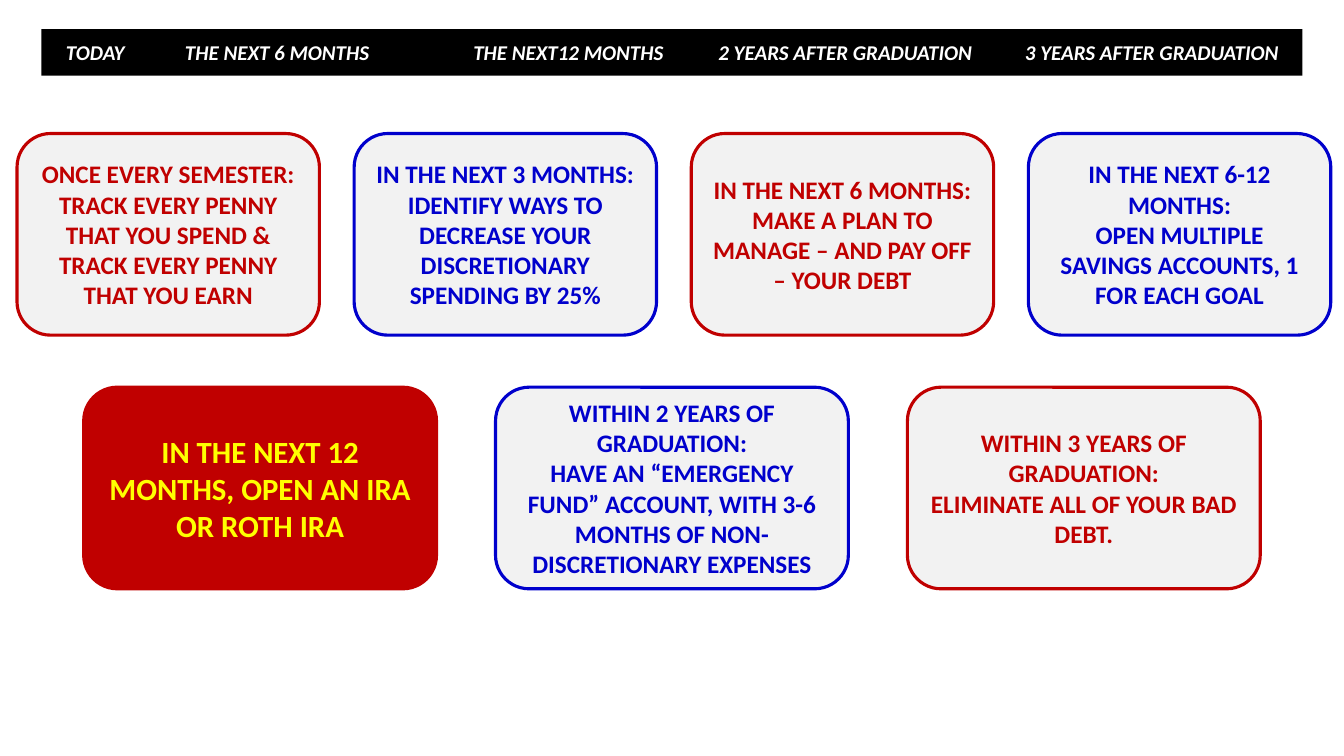
from lxml.etree import SubElement
from pptx import Presentation
from pptx.dml.color import RGBColor
from pptx.enum.shapes import MSO_SHAPE
from pptx.enum.text import MSO_ANCHOR, PP_ALIGN
from pptx.oxml.ns import qn
from pptx.util import Pt

COLORS = {"black": "000000", "white": "FFFFFF", "gray": "F2F2F2",
          "red": "C00000", "blue": "0000CC", "yellow": "FFFF00"}

# Milestone and its distance from the start of the timeline text
TIMELINE = [("TODAY", 0), ("THE NEXT 6 MONTHS", 85), ("THE NEXT12 MONTHS", 291),
            ("2 YEARS AFTER GRADUATION", 466), ("3 YEARS AFTER GRADUATION", 685)]

# Paragraphs, fill, line, text colour, text size
GOAL_ROWS = [
    {"left": 12.2, "top": 95.4, "width": 216, "pitch": 240.8, "goals": [
        (["ONCE EVERY SEMESTER:",
          "TRACK EVERY PENNY THAT YOU SPEND & TRACK EVERY PENNY THAT YOU EARN"],
         "gray", "red", "red", 18),
        (["IN THE NEXT 3 MONTHS:",
          "IDENTIFY WAYS TO DECREASE YOUR DISCRETIONARY SPENDING BY 25%"],
         "gray", "blue", "blue", 18),
        (["IN THE NEXT 6 MONTHS:", "MAKE A PLAN TO MANAGE – AND PAY OFF – YOUR DEBT"],
         "gray", "red", "red", 18),
        (["IN THE NEXT 6-12 MONTHS:", "OPEN MULTIPLE SAVINGS ACCOUNTS, 1 FOR EACH GOAL"],
         "gray", "blue", "blue", 18),
    ]},
    {"left": 59.8, "top": 276.6, "width": 252, "pitch": 294.2, "goals": [
        (["IN THE NEXT 12 MONTHS, OPEN AN IRA OR ROTH IRA"],
         "red", "red", "yellow", 22),
        (["WITHIN 2 YEARS OF GRADUATION:",
          "HAVE AN “EMERGENCY FUND” ACCOUNT, WITH 3-6 MONTHS OF "
          "NON-DISCRETIONARY EXPENSES"],
         "gray", "blue", "blue", 18),
        (["WITHIN 3 YEARS OF GRADUATION:", "ELIMINATE ALL OF YOUR BAD DEBT."],
         "gray", "red", "red", 18),
    ]},
]
GOAL_HEIGHT = 144


def color(name):
    return RGBColor.from_string(COLORS[name])


def add_box(slide, kind, left, top, width, height, fill, line=None):
    shape = slide.shapes.add_shape(kind, Pt(left), Pt(top), Pt(width), Pt(height))
    shape.shadow.inherit = False
    shape.fill.solid()
    shape.fill.fore_color.rgb = color(fill)
    if line:
        shape.line.color.rgb = color(line)
        shape.line.width = Pt(2.25)
    else:
        shape.line.fill.background()
    shape.text_frame.word_wrap = True
    shape.text_frame.vertical_anchor = MSO_ANCHOR.MIDDLE
    return shape


def add_run(paragraph, text, size, text_color, italic=None):
    run = paragraph.add_run()
    run.text = text
    run.font.name = "Calibri"
    run.font.size = Pt(size)
    run.font.bold = True
    run.font.italic = italic
    run.font.color.rgb = color(text_color)


def add_timeline(slide):
    shape = add_box(slide, MSO_SHAPE.RECTANGLE, 29.5, 20.9, 900.7, 33.1, "black")
    shape.text_frame.margin_left = Pt(17.6)
    paragraph = shape.text_frame.paragraphs[0]
    paragraph.alignment = PP_ALIGN.LEFT
    tabs = SubElement(paragraph._p.get_or_add_pPr(), qn("a:tabLst"))
    for label, position in TIMELINE:
        if position:
            SubElement(tabs, qn("a:tab"), pos=str(Pt(position)), algn="l")
        add_run(paragraph, "\t" + label if position else label, 15, "white", italic=True)


def add_goal(slide, left, top, width, goal):
    texts, fill, line, text_color, size = goal
    shape = add_box(slide, MSO_SHAPE.ROUNDED_RECTANGLE, left, top, width, GOAL_HEIGHT,
                    fill, line)
    frame = shape.text_frame
    for index, text in enumerate(texts):
        paragraph = frame.add_paragraph() if index else frame.paragraphs[0]
        paragraph.alignment = PP_ALIGN.CENTER
        add_run(paragraph, text, size, text_color)


def main():
    presentation = Presentation()
    presentation.slide_width, presentation.slide_height = Pt(960), Pt(540)
    slide = presentation.slides.add_slide(presentation.slide_layouts[6])
    add_timeline(slide)
    for row in GOAL_ROWS:
        for column, goal in enumerate(row["goals"]):
            add_goal(slide, row["left"] + column * row["pitch"], row["top"],
                     row["width"], goal)
    presentation.save("out.pptx")


if __name__ == "__main__":
    main()
